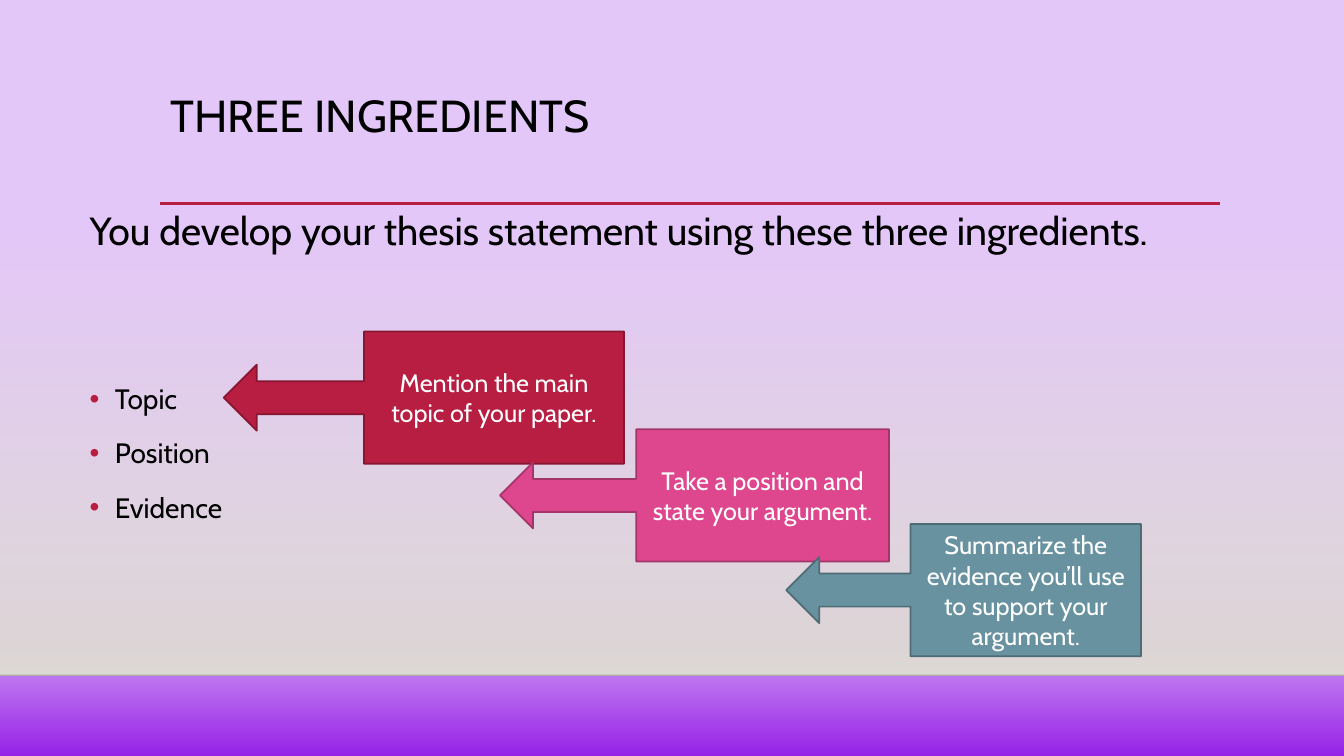
from dataclasses import dataclass

from lxml import etree
from pptx import Presentation, util as u
from pptx.dml.color import RGBColor
from pptx.enum import shapes, text
from pptx.oxml import ns

# Places are percentages of the slide's width and height.
TITLE = ("THREE INGREDIENTS", (11.93, 11.73, 78.75, 15.33))
INTRO = ("You develop your thesis statement using these three ingredients.",
         (5.93, 26.67, 87.83, 7.6))
INGREDIENTS = (["Topic", "Position", "Evidence"], (5.93, 48.93, 86.25, 45.2))
CALLOUT_HEIGHT = 17.47
CALLOUTS = [  # wording, left, top, width, fill, outline
    ("Mention the main topic of your paper.", 16.65, 43.87, 29.78, "B71E42", "871631"),
    ("Take a position and state your argument.", 37.2, 56.8, 28.95, "DE478E", "A43569"),
    ("Summarize the evidence you’ll use to support your argument.",
     58.5, 69.33, 26.4, "6892A0", "4D6C76"),
]
FADE_TOP, FLOOR = 29.47, 89.33
TITLE_RULE = (11.93, 90.75, 26.93)  # left, right, height on the slide


@dataclass(frozen=True)
class Theme:
    font: str = "Cabin"
    ink: str = "000000"
    light: str = "FFFFFF"
    accent: str = "B71E42"
    floor_line: str = "000001"
    title_size: int = 32
    intro_size: int = 28
    list_size: int = 20
    callout_size: int = 18
    # Stops: position in percent, colour, opacity in percent
    backdrop: tuple = ((0, "E4C7F9", 100), (74, "E4C7F9", 100),
                       (83, "D7AAF6", 100), (100, "9622E7", 100))
    fade: tuple = ((0, "DFDBD5", 0), (100, "DFDBD5", 100))


THEME = Theme()
presentation = Presentation()
presentation.slide_width, presentation.slide_height = u.Inches(13.333), u.Inches(7.5)
slide = presentation.slides.add_slide(presentation.slide_layouts[6])


def across(percent):
    return round(presentation.slide_width * percent / 100)


def down(percent):
    return round(presentation.slide_height * percent / 100)


def place(left, top, width, height):
    return across(left), down(top), across(width), down(height)


def add_child(parent, tag, **attributes):
    child = etree.SubElement(parent, ns.qn(tag))
    for name, value in attributes.items():
        child.set(name, str(value))
    return child


def set_alpha(color, percent):
    add_child(color, "a:alpha", val=percent * 1000)


def paint_gradient(fill, owner, stops):
    """Fill from top to bottom; owner is the XML element that holds the fill."""
    fill.gradient()
    fill.gradient_angle = 270
    stop_list = next(owner.iter(ns.qn("a:gsLst")))
    for stop in list(stop_list):
        stop_list.remove(stop)
    for position, color, opacity in stops:
        stop = add_child(stop_list, "a:gs", pos=position * 1000)
        set_alpha(add_child(stop, "a:srgbClr", val=color), opacity)


def add_rule(left, right, height, color, weight):
    rule = slide.shapes.add_connector(
        shapes.MSO_CONNECTOR.STRAIGHT, across(left), down(height), across(right), down(height))
    rule.line.color.rgb = RGBColor.from_string(color)
    rule.line.width = u.Pt(weight)
    add_child(rule.element.spPr, "a:effectLst")
    return rule


def write(shape, lines, size, color, bullet=None, **formats):
    frame = shape.text_frame
    frame.word_wrap = True
    frame.text = "\n".join(lines)
    for index, paragraph in enumerate(frame.paragraphs):
        if bullet:
            properties = paragraph._p.get_or_add_pPr()
            properties.set("marL", str(u.Inches(0.25)))
            properties.set("indent", str(-u.Inches(0.25)))
            add_child(add_child(properties, "a:buClr"), "a:srgbClr", val=THEME.accent)
            add_child(properties, "a:buFont", typeface="Arial")
            add_child(properties, "a:buChar", char=bullet)
        for name, value in formats.items():
            if name != "space_before" or index:
                setattr(paragraph, name, value)
        for name, value in {"name": THEME.font, "size": u.Pt(size)}.items():
            setattr(paragraph.font, name, value)
        paragraph.font.color.rgb = RGBColor.from_string(color)


def add_text(lines, box, size, **formats):
    write(slide.shapes.add_textbox(*place(*box)), lines, size, THEME.ink, **formats)


def add_callout(wording, left, top, width, fill, outline):
    callout = slide.shapes.add_shape(
        shapes.MSO_SHAPE.LEFT_ARROW_CALLOUT, *place(left, top, width, CALLOUT_HEIGHT))
    callout.shadow.inherit = False
    callout.fill.solid()
    callout.fill.fore_color.rgb = RGBColor.from_string(fill)
    callout.line.color.rgb = RGBColor.from_string(outline)
    callout.line.width = u.Pt(1.25)
    callout.text_frame.vertical_anchor = text.MSO_ANCHOR.MIDDLE
    write(callout, [wording], THEME.callout_size, THEME.light,
          alignment=text.PP_ALIGN.CENTER)


def main():
    paint_gradient(slide.background.fill, slide.element, THEME.backdrop)
    fade = slide.shapes.add_shape(
        shapes.MSO_SHAPE.RECTANGLE, *place(0, FADE_TOP, 100, FLOOR - FADE_TOP))
    fade.shadow.inherit = False
    fade.line.fill.background()
    paint_gradient(fade.fill, fade.element, THEME.fade)

    floor_line = add_rule(0, 100, FLOOR, THEME.floor_line, 1)
    set_alpha(next(floor_line.element.spPr.iter(ns.qn("a:srgbClr"))), 20)
    add_rule(*TITLE_RULE, THEME.accent, 2.5)

    title, title_box = TITLE
    add_text([title], title_box, THEME.title_size, line_spacing=0.9)
    add_text(*INGREDIENTS, THEME.list_size, bullet="•",
             line_spacing=1.2, space_before=u.Pt(10))
    for callout in CALLOUTS:
        add_callout(*callout)
    intro, intro_box = INTRO
    add_text([intro], intro_box, THEME.intro_size)
    presentation.save("out.pptx")


if __name__ == "__main__":
    main()
